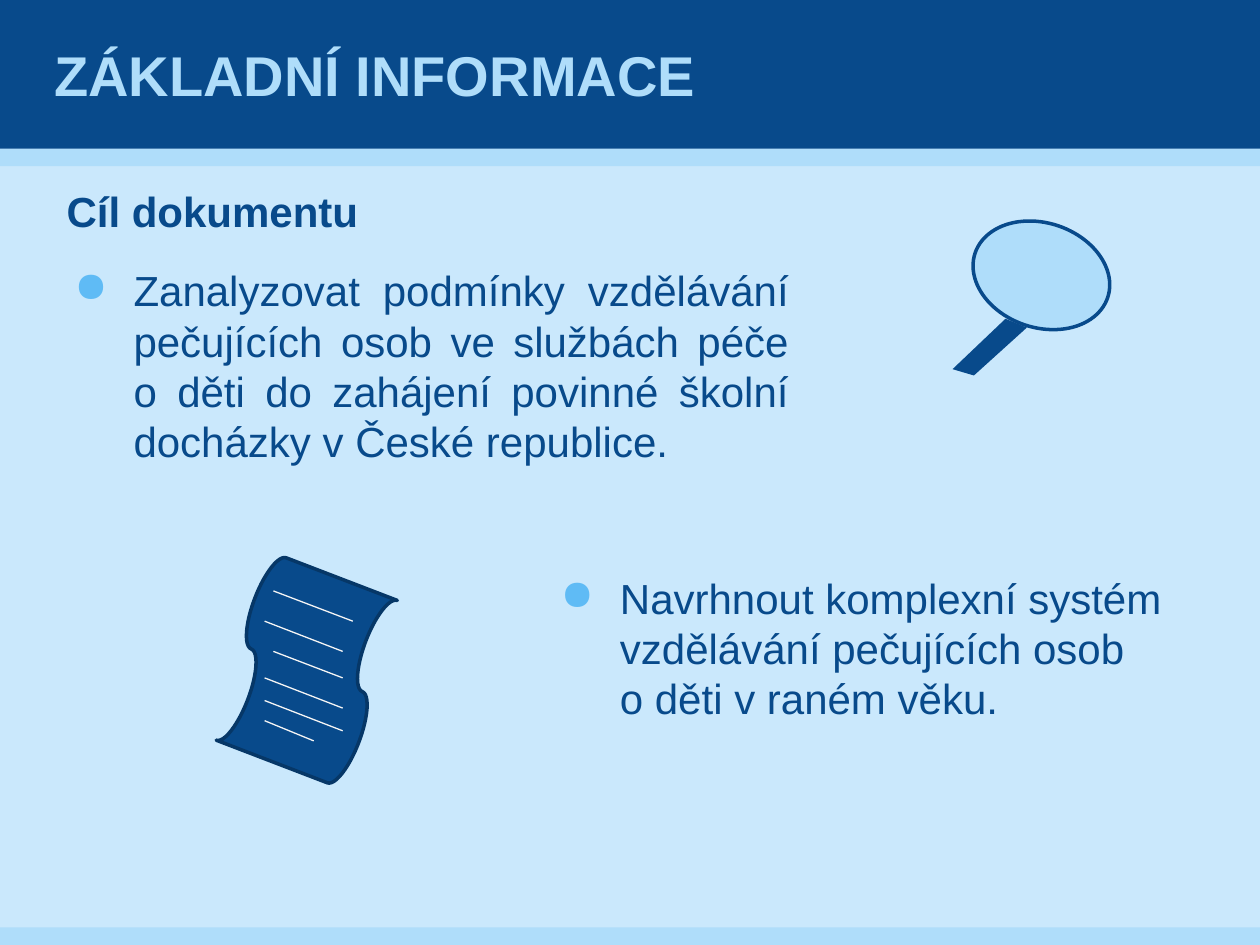
from lxml.etree import SubElement
from pptx import Presentation
from pptx.dml.color import RGBColor
from pptx.enum.shapes import MSO_CONNECTOR, MSO_SHAPE as Shape
from pptx.enum.text import MSO_ANCHOR as Anchor, PP_ALIGN as Align
from pptx.oxml.ns import qn
from pptx.util import Inches, Pt

NAVY, DEEP, SKY, PALE = "084A8B", "063767", "AFDDFA", "CAE8FC"
BULLET, WRITING = "5FBBF5", "F5F5F5"

TITLE = "ZÁKLADNÍ INFORMACE"
HEADING = "Cíl dokumentu"
GOALS = [  # text, place, alignment
    ("Zanalyzovat podmínky vzdělávání pečujících osob ve službách péče "
     "o děti do zahájení povinné školní docházky v České republice.",
     (0.59, 2.1, 5.67, 1.78), Align.JUSTIFY),
    ("Navrhnout komplexní systém vzdělávání pečujících osob \vo děti v raném věku.",
     (4.45, 4.54, 5.28, 1.34), Align.LEFT),
]
BANDS = [((0, 1.18, 10, 0.14), SKY), ((0, 0, 10, 1.18), NAVY), ((0, 7.36, 10, 0.14), SKY)]
HANDLE = [(7.56, 2.93), (7.73, 2.98), (8.15, 2.6), (7.98, 2.53)]
WRITING_LINES = [  # from x, y to x, y
    (2.17, 4.69, 2.8, 4.93), (2.1, 4.93, 2.72, 5.17), (2.17, 5.17, 2.72, 5.38),
    (2.1, 5.38, 2.72, 5.62), (2.1, 5.56, 2.72, 5.8), (2.1, 5.72, 2.49, 5.88),
]


def color(value):
    return RGBColor.from_string(value)


def inches(values):
    return [Inches(value) for value in values]


def paint(shape, fill, line=None):
    shape.shadow.inherit = False
    shape.fill.solid()
    shape.fill.fore_color.rgb = color(fill)
    if line:
        shape.line.color.rgb = color(line)
        shape.line.width = Pt(2)
    else:
        shape.line.fill.background()


def add_preset(page, kind, place, fill, line=None, turn=0):
    shape = page.shapes.add_shape(kind, *inches(place))
    shape.rotation = turn
    paint(shape, fill, line)


def add_text(page, text, place, size=24, ink=NAVY, bold=False, align=Align.LEFT,
             anchor=Anchor.TOP, margins=(0, 0, 0, 0), bullet=False):
    box = page.shapes.add_textbox(*inches(place))
    frame = box.text_frame
    frame.word_wrap = True
    frame.vertical_anchor = anchor
    (frame.margin_left, frame.margin_top,
     frame.margin_right, frame.margin_bottom) = inches(margins)
    frame.text = text
    para = frame.paragraphs[0]
    para.alignment = align
    for span in para.runs:
        span.font.name = "Arial"
        span.font.size = Pt(size)
        span.font.bold = bold
        span.font.color.rgb = color(ink)
    if bullet:
        para.line_spacing = Pt(28.8)
        para.space_before = para.space_after = Pt(6)
        props = para._p.get_or_add_pPr()
        props.set("marL", str(Inches(0.47)))
        props.set("indent", str(-Inches(0.47)))
        SubElement(SubElement(props, qn("a:buClr")), qn("a:srgbClr")).set("val", BULLET)
        SubElement(props, qn("a:buChar")).set("char", "●")


def add_line(page, ends):
    line = page.shapes.add_connector(MSO_CONNECTOR.STRAIGHT, *inches(ends))
    line.line.color.rgb = color(WRITING)
    line.line.width = Pt(0.75)
    SubElement(line._element.spPr, qn("a:effectLst"))


def main():
    deck = Presentation()
    deck.slide_width, deck.slide_height = Inches(10), Inches(7.5)
    page = deck.slides.add_slide(deck.slide_layouts[6])
    page.background.fill.solid()
    page.background.fill.fore_color.rgb = color(PALE)

    # Bands and texts
    for place, fill in BANDS:
        add_preset(page, Shape.RECTANGLE, place, fill)
    add_text(page, TITLE, (0.39, 0, 9.21, 1.18), size=32, ink=SKY, bold=True,
             anchor=Anchor.MIDDLE, margins=(0.04, 0, 0.04, 0))
    for text, place, align in GOALS:
        add_text(page, text, place, align=align, bullet=True)

    # Magnifying glass
    add_preset(page, Shape.OVAL, (7.85, 1.63, 0.83, 1.11), SKY, NAVY, turn=108.5)
    start, *rest = [inches(point) for point in HANDLE]
    outline = page.shapes.build_freeform(*start)
    outline.add_line_segments(rest, close=True)
    paint(outline.convert_to_shape(), NAVY)

    # Written sheet
    add_preset(page, Shape.FLOWCHART_PUNCHED_TAPE, (1.66, 4.73, 1.55, 1.18),
               NAVY, DEEP, turn=291)
    for ends in WRITING_LINES:
        add_line(page, ends)

    add_text(page, HEADING, (0.43, 1.42, 5.51, 0.5), bold=True,
             margins=(0.1, 0.05, 0.1, 0.05))
    deck.save("out.pptx")


if __name__ == "__main__":
    main()
